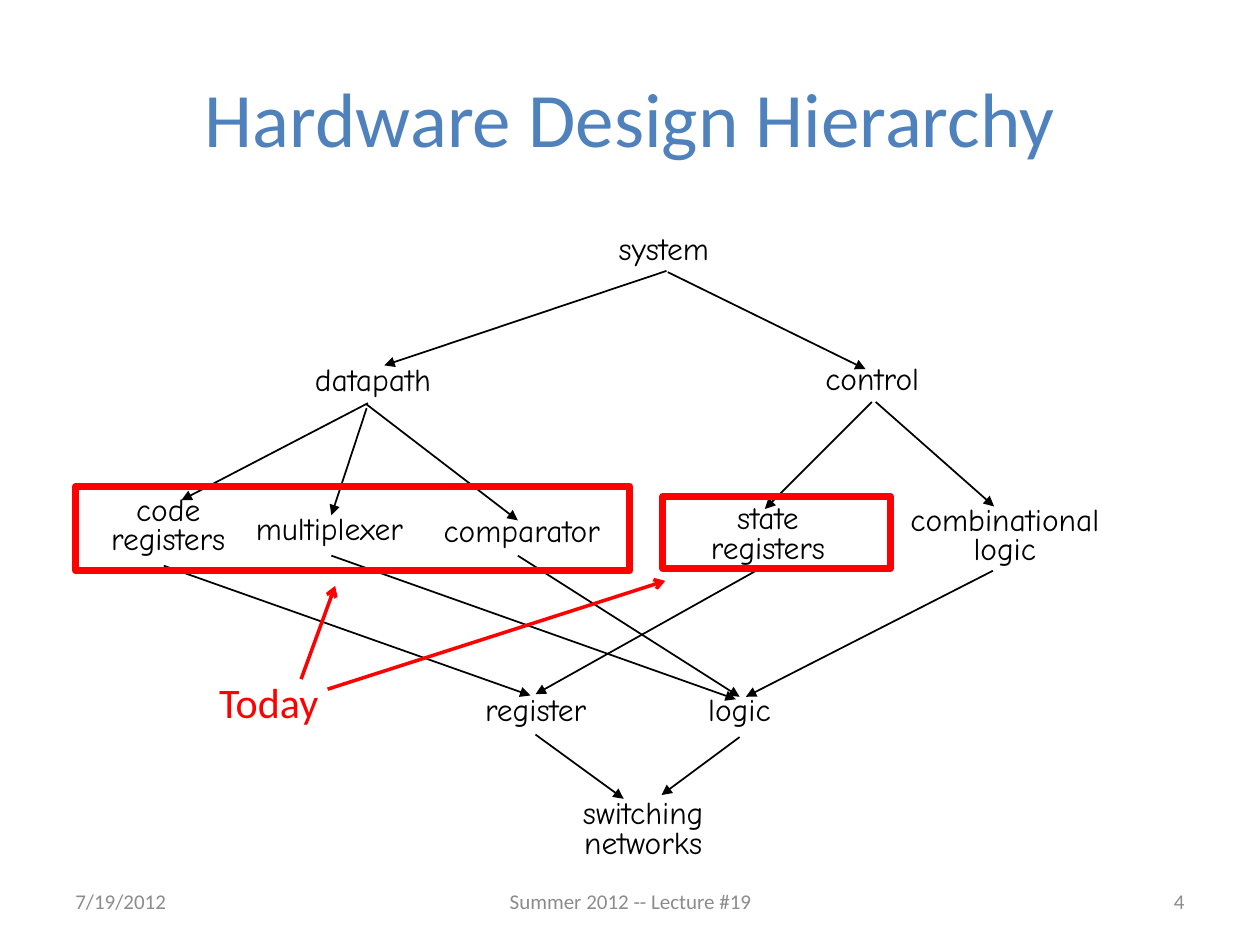
from pptx import Presentation
from pptx.dml.color import RGBColor
from pptx.enum.shapes import MSO_CONNECTOR, MSO_SHAPE
from pptx.enum.text import MSO_ANCHOR, PP_ALIGN
from pptx.oxml.ns import qn
from pptx.util import Inches, Pt
from lxml import etree

LEFT, MID, RIGHT = PP_ALIGN.LEFT, PP_ALIGN.CENTER, PP_ALIGN.RIGHT
TOP, HALF = MSO_ANCHOR.TOP, MSO_ANCHOR.MIDDLE
LINE, RECT = MSO_CONNECTOR.STRAIGHT, MSO_SHAPE.RECTANGLE
COLORS = {name: RGBColor.from_string(code) for name, code in {
    "black": "000000", "red": "FF0000", "title": "4F81BD", "gray": "8C8C8C",
}.items()}

prs = Presentation()
prs.slide_width, prs.slide_height = Inches(10), Inches(7.5)
slide = prs.slides.add_slide(prs.slide_layouts[5])
shapes = slide.shapes


def write(text, at, box=None, font="Calibri", size=12, color="black",
          align=LEFT, anchor=TOP, wrap=True, inset=(0.1, 0.05), pitch=None):
    """Place text in the given box, or in a new text box."""
    at = [Inches(v) for v in at]
    if box is None:
        box = shapes.add_textbox(*at)
    box.left, box.top, box.width, box.height = at
    frame = box.text_frame
    frame.word_wrap, frame.vertical_anchor = wrap, anchor
    frame.margin_left = frame.margin_right = Inches(inset[0])
    frame.margin_top = frame.margin_bottom = Inches(inset[1])
    para = frame.paragraphs[0]
    para.text, para.alignment = text, align
    if pitch:
        para.line_spacing = Pt(pitch)
    for run in para.runs:
        run.font.name, run.font.size = font, Pt(size)
        run.font.color.rgb = COLORS[color]


def arrow(x1, y1, x2, y2, color="black", width=1, head="triangle"):
    link = shapes.add_connector(LINE, *[Inches(v) for v in (x1, y1, x2, y2)])
    link.line.color.rgb, link.line.width = COLORS[color], Pt(width)
    etree.SubElement(link.line._get_or_add_ln(), qn("a:tailEnd"), type=head)
    etree.SubElement(link._element.spPr, qn("a:effectLst"))


write("Hardware Design Hierarchy", (0.5, 0.3, 9, 1.25), box=shapes.title,
      size=44, color="title", align=MID, anchor=HALF)

# Tree nodes: text, left, top, width
nodes = [
    ("system", 4.89, 1.85, 1.12),
    ("datapath", 2.48, 2.89, 1.33),
    ("control", 6.53, 2.88, 1.11),
    ("code\nregisters", 0.83, 3.92, 1.01),
    ("multiplexer", 2.01, 4.07, 1.49),
    ("comparator", 3.5, 4.09, 1.52),
    ("state\nregisters", 5.26, 3.99, 1.67),
    ("combinational\nlogic", 6.79, 4, 2.37),
    ("register", 3.83, 5.51, 1.16),
    ("logic", 5.6, 5.51, 0.92),
    ("switching\nnetworks", 4.09, 6.33, 2.03),
]
for text, x, y, width in nodes:
    double = "\n" in text
    write(text, (x, y, width, 0.6 if double else 0.37), font="Comic Neue",
          size=18, align=MID if double else LEFT, wrap=False,
          inset=(0.02, 0.03), pitch=17)

# Tree edges: start x, y, end x, y
edges = [
    (5.29, 2.15, 3.05, 2.9),   # system
    (5.3, 2.16, 6.87, 2.93),
    (2.92, 3.2, 1.44, 3.97),   # datapath
    (2.91, 3.24, 2.63, 4.09),
    (2.91, 3.21, 4.11, 4.13),
    (6.92, 3.19, 6.07, 4.04),  # control
    (6.95, 3.19, 7.89, 4.02),
    (1.3, 4.49, 4.21, 5.52),   # to register
    (6, 4.53, 4.25, 5.51),
    (2.63, 4.41, 5.84, 5.55),  # to logic
    (4.11, 4.41, 5.87, 5.53),
    (7.88, 4.53, 5.92, 5.53),
    (4.25, 5.83, 4.95, 6.34),  # to switching networks
    (5.87, 5.85, 5.25, 6.31),
]
for edge in edges:
    arrow(*edge)

footer = [
    ("7/19/2012", 0.5, 2.33, LEFT),
    ("Summer 2012 -- Lecture #19", 3.42, 3.17, MID),
    ("4", 7.17, 2.33, RIGHT),
]
for text, x, width, align in footer:
    write(text, (x, 6.95, width, 0.4), color="gray", align=align, anchor=HALF)

# Today's topics
for at in [(0.6, 3.86, 4.4, 0.67), (5.26, 3.94, 1.81, 0.57)]:
    frame = shapes.add_shape(RECT, *[Inches(v) for v in at])
    frame.shadow.inherit = False
    frame.fill.background()
    frame.line.color.rgb, frame.line.width = COLORS["red"], Pt(4)

write("Today", (1.64, 5.32, 1, 0.5), size=24, color="red", wrap=False)
for ends in [(2.6, 5.47, 5.28, 4.61), (2.39, 5.39, 2.66, 4.65)]:
    arrow(*ends, color="red", width=2, head="arrow")

prs.save("out.pptx")
